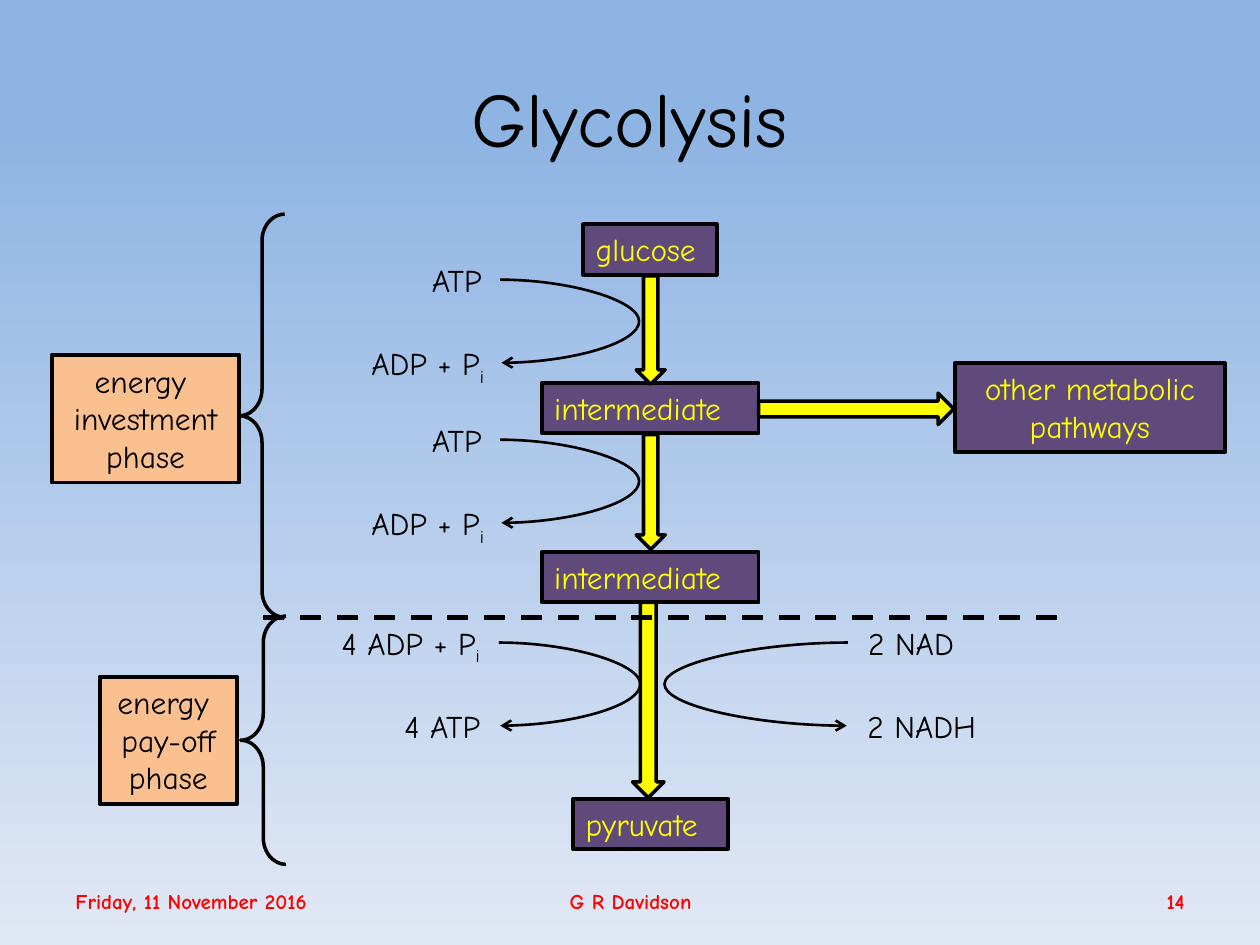
import lxml.etree
import pptx
import pptx.dml.color
import pptx.enum.dml
import pptx.enum.shapes
import pptx.enum.text
import pptx.oxml.ns
import pptx.util

Inches = pptx.util.Inches
SHAPE = pptx.enum.shapes.MSO_SHAPE
CONNECTOR = pptx.enum.shapes.MSO_CONNECTOR
ALIGN = pptx.enum.text.PP_ALIGN
ANCHOR = pptx.enum.text.MSO_ANCHOR
FONT = "Comic Neue"
BLACK, YELLOW, PURPLE, ORANGE, RED = "000000", "FFFF00", "604A7B", "FAC090", "FF0000"
LABEL_HEIGHT = 0.4


def paint(color_format, color):
    """Set a colour format to a hex colour."""
    color_format.rgb = pptx.dml.color.RGBColor.from_string(color)


def add_xml_child(parent, tag, **attributes):
    """Append a DrawingML child element with the given attributes."""
    return lxml.etree.SubElement(parent, pptx.oxml.ns.qn(tag), attributes)


def set_background(slide):
    """Fill the slide with a vertical blue gradient."""
    fill = slide.background.fill
    fill.gradient()
    fill.gradient_angle = 270
    stops = ((0.13, "8EB4E3"), (1, "E1E8F5"))
    for stop, (position, color) in zip(fill.gradient_stops, stops):
        stop.position = position
        paint(stop.color, color)


def write_text(shape, text, size, color, align, bold=False):
    """Write text into a shape and format all of its runs."""
    shape.text_frame.text = text
    for paragraph in shape.text_frame.paragraphs:
        paragraph.alignment = align
        for run in paragraph.runs:
            format_run(run, size, color, bold)


def format_run(run, size, color, bold=False):
    """Set the font of one run."""
    run.font.name = FONT
    run.font.size = pptx.util.Pt(size)
    run.font.bold = bold
    paint(run.font.color, color)


def fit_to_text(text_frame):
    """Let the shape grow around unwrapped text."""
    text_frame.word_wrap = False
    text_frame.vertical_anchor = ANCHOR.TOP
    text_frame.auto_size = pptx.enum.text.MSO_AUTO_SIZE.SHAPE_TO_FIT_TEXT


def add_title(slide, text):
    """Place the slide title in its placeholder."""
    title = slide.shapes.title
    title.left, title.top = Inches(0.5), Inches(0.3)
    title.width, title.height = Inches(9), Inches(1.25)
    title.text_frame.vertical_anchor = ANCHOR.MIDDLE
    write_text(title, text, 44, BLACK, ALIGN.CENTER)


def add_footer(slide, text, left, width, align):
    """Add one part of the footer line."""
    footer = slide.shapes.add_textbox(Inches(left), Inches(6.95), Inches(width), Inches(0.4))
    footer.text_frame.word_wrap = True
    footer.text_frame.vertical_anchor = ANCHOR.MIDDLE
    write_text(footer, text, 12, RED, align, bold=True)


def add_shape(slide, kind, left, top, width, height, fill=None, line_width=2):
    """Add a black-outlined preset shape."""
    shape = slide.shapes.add_shape(kind, Inches(left), Inches(top), Inches(width), Inches(height))
    shape.shadow.inherit = False
    if fill:
        shape.fill.solid()
        paint(shape.fill.fore_color, fill)
    else:
        shape.fill.background()
    paint(shape.line.color, BLACK)
    shape.line.width = pptx.util.Pt(line_width)
    return shape


def add_box(slide, text, left, top, width, height, fill, color, align):
    """Add a filled rectangle with text."""
    box = add_shape(slide, SHAPE.RECTANGLE, left, top, width, height, fill, 2.25)
    fit_to_text(box.text_frame)
    write_text(box, text, 18, color, align)


def add_brace(slide, left, top, height):
    """Add the brace that spans one phase."""
    brace = add_shape(slide, SHAPE.LEFT_BRACE, left, top, 0.36, height)
    brace.adjustments[0] = 0.589
    brace.adjustments[1] = 0.5


def add_label(slide, text, left, top, width, subscript=""):
    """Add a cofactor label, with an optional subscript."""
    label = slide.shapes.add_textbox(
        Inches(left), Inches(top), Inches(width), Inches(LABEL_HEIGHT))
    fit_to_text(label.text_frame)
    write_text(label, text, 18, BLACK, ALIGN.CENTER)
    if subscript:
        run = label.text_frame.paragraphs[0].add_run()
        run.text = subscript
        format_run(run, 18, BLACK)
        run.font._element.set("baseline", "-25000")
    return label


def style_line(connector, width):
    """Give a connector a plain black line without shadow."""
    paint(connector.line.color, BLACK)
    connector.line.width = pptx.util.Pt(width)
    add_xml_child(connector._element.spPr, "a:effectLst")


def add_turn(slide, before, after, site, bend_x):
    """Join two labels with a curved arrow that bends out to bend_x."""
    connector = slide.shapes.add_connector(CONNECTOR.CURVE, 0, 0, 0, 0)
    connector.begin_connect(before, site)
    connector.end_connect(after, site)
    style_line(connector, 1.5)
    add_xml_child(connector.line._get_or_add_ln(), "a:tailEnd", type="arrow")
    properties = connector._element.spPr
    reach = abs(Inches(bend_x) - connector.begin_x) / connector.width
    guides = properties.find(".//" + pptx.oxml.ns.qn("a:avLst"))
    add_xml_child(guides, "a:gd", name="adj1", fmla=f"val {round(reach * 100000)}")
    if connector.begin_x > connector.end_x:
        transform = properties.find(pptx.oxml.ns.qn("a:xfrm"))
        transform.attrib.pop("flipH", None)
        transform.set("rot", "10800000")
        transform.set("flipV", "1")


def add_divider(slide):
    """Add the dashed line between the two phases."""
    divider = slide.shapes.add_connector(
        CONNECTOR.STRAIGHT, Inches(2.09), Inches(4.9), Inches(8.46), Inches(4.9))
    style_line(divider, 3)
    divider.line.dash_style = pptx.enum.dml.MSO_LINE.DASH


def add_pathway(slide):
    """Add the metabolites and the block arrows between them."""
    for text, left, top, width in (
            ("glucose", 4.63, 1.78, 1.06), ("intermediate", 4.3, 3.04, 1.72),
            ("intermediate", 4.3, 4.38, 1.72), ("pyruvate", 4.55, 6.34, 1.23)):
        add_box(slide, text, left, top, width, 0.4, PURPLE, YELLOW, ALIGN.LEFT)
    for left, top, width, height, rotation in (
            (5.05, 2.19, 0.23, 0.86, 0), (5.05, 3.45, 0.23, 0.91, 0),
            (5.02, 4.78, 0.25, 1.55, 0), (6.67, 2.47, 0.25, 1.55, 270)):
        arrow = add_shape(slide, SHAPE.DOWN_ARROW, left, top, width, height, YELLOW)
        arrow.rotation = rotation
    add_box(slide, "other metabolic\npathways", 7.58, 2.88, 2.14, 0.71,
            PURPLE, YELLOW, ALIGN.CENTER)


def add_cofactors(slide):
    """Add the cofactor labels and their curved arrows."""
    drop = 0.66
    for top in (2.02, 3.29):
        before = add_label(slide, "ATP", 3.28, top, 0.69)
        after = add_label(slide, "ADP + P", 2.81, top + drop, 1.17, "i")
        add_turn(slide, before, after, 3, 5.09)
    before = add_label(slide, "4 ADP + P", 2.56, 4.9, 1.4, "i")
    after = add_label(slide, "4 ATP", 3.05, 4.9 + drop, 0.92)
    add_turn(slide, before, after, 3, 5.1)
    before = add_label(slide, "2 NAD", 6.73, 4.9, 1)
    after = add_label(slide, "2 NADH", 6.72, 4.9 + drop, 1.19)
    add_turn(slide, before, after, 1, 5.25)


def main():
    """Build the glycolysis slide."""
    presentation = pptx.Presentation()
    presentation.slide_width, presentation.slide_height = Inches(10), Inches(7.5)
    slide = presentation.slides.add_slide(presentation.slide_layouts[5])
    set_background(slide)
    add_title(slide, "Glycolysis")
    add_footer(slide, "Friday, 11 November 2016", 0.5, 3.32, ALIGN.LEFT)
    add_footer(slide, "G R Davidson", 3.42, 3.17, ALIGN.CENTER)
    add_footer(slide, "14", 7.17, 2.33, ALIGN.RIGHT)
    add_pathway(slide)
    add_cofactors(slide)
    add_divider(slide)
    add_brace(slide, 1.9, 1.7, 3.2)
    add_brace(slide, 1.91, 4.89, 1.97)
    for text, left, top, width in (("energy \ninvestment\nphase", 0.41, 2.82, 1.49),
                                   ("energy \npay-off\nphase", 0.79, 5.37, 1.09)):
        add_box(slide, text, left, top, width, 1.01, ORANGE, BLACK, ALIGN.CENTER)
    presentation.save("out.pptx")


if __name__ == "__main__":
    main()
